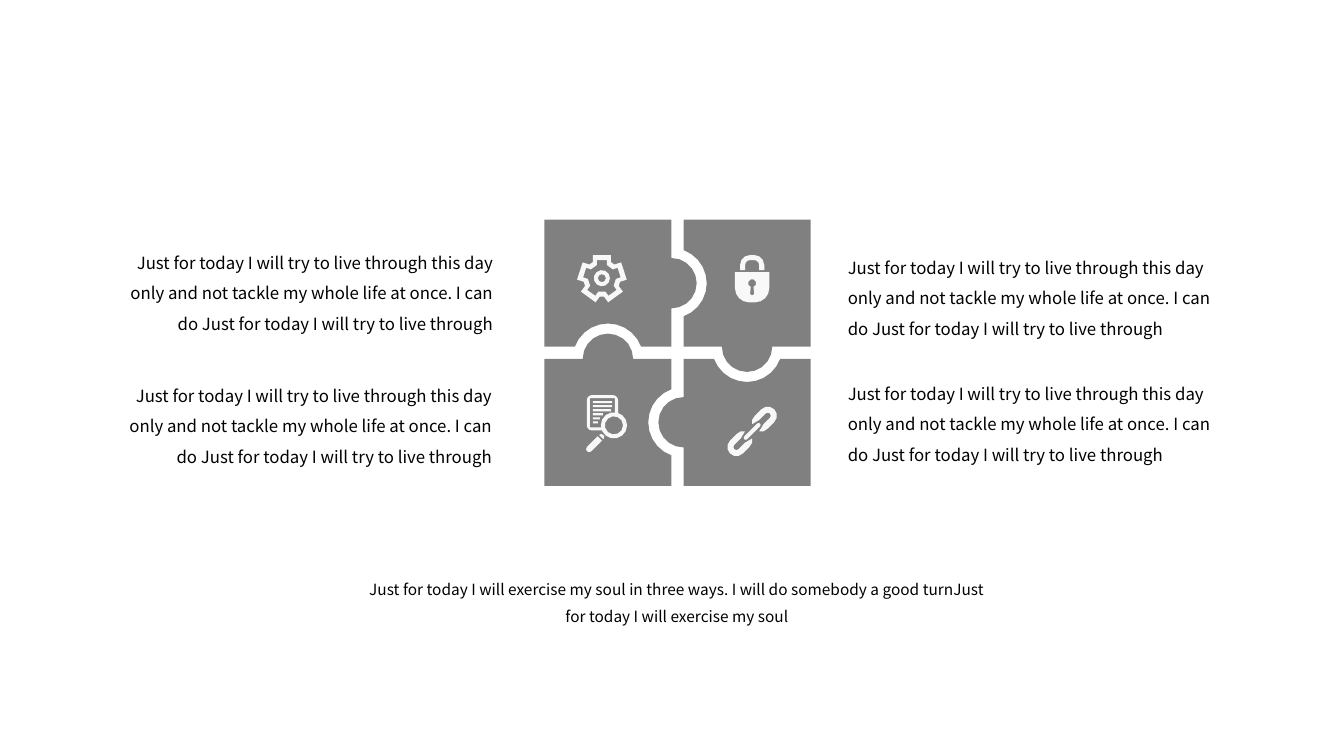
from math import cos, radians, sin
from pptx import Presentation
from pptx.dml.color import RGBColor
from pptx.enum import text
from pptx.util import Inches, Pt

GRAY, WHITE, BLACK = "808080", "F8F8F8", "000000"

prs = Presentation()
prs.slide_width, prs.slide_height = Inches(13.33), Inches(7.5)
s = prs.slides.add_slide(prs.slide_layouts[6])


def arc(cx, cy, r, start, end):
    steps = max(3, round(abs(end - start) * (r + 0.1) / 6))
    angles = [radians(start + (end - start) * i / steps) for i in range(steps + 1)]
    return [(cx + r * cos(a), cy + r * sin(a)) for a in angles]


def draw(color, contours, center=(0, 0), angle=0):
    c, n = cos(radians(angle)), sin(radians(angle))
    fb = None
    for contour in contours:
        pts = [(Inches(center[0] + x * c - y * n), Inches(center[1] + x * n + y * c))
               for x, y in contour]
        if fb is None:
            fb = s.shapes.build_freeform(*pts[0])
        else:
            fb.move_to(*pts[0])
        fb.add_line_segments(pts[1:], close=True)
    sp = fb.convert_to_shape()
    sp.shadow.inherit = False
    sp.fill.solid()
    sp.fill.fore_color.rgb = RGBColor.from_string(color)
    sp.line.fill.background()


piece = [(-1.32, -1.32), (-0.06, -1.32), *arc(-0.06, -0.69, 0.25, -90, 90),
         (-0.06, -0.06), *arc(-0.69, 0.06, 0.35, -20.05, -159.95), (-1.32, -0.06)]
for i in range(4):
    draw(GRAY, [piece], (6.72, 3.5), 90 * i)

tooth = [(-0.09, -0.16), (-0.09, -0.23), (0.09, -0.23), (0.09, -0.16)]
notch = [(-0.05, -0.13), (-0.05, -0.18), (0.05, -0.18), (0.05, -0.13)]
gear = []
for profile in (tooth, notch):
    rim = []
    for i in range(5):
        a = radians(72 * i)
        rim += [(x * cos(a) - y * sin(a), x * sin(a) + y * cos(a)) for x, y in profile]
    gear.append(rim)
gear += [arc(0, 0, r, 0, 360) for r in (0.08, 0.04)]
draw(WHITE, gear, (5.97, 2.76))

shackle = [(-0.12, 0.15), *arc(-0.02, 0.1, 0.1, 180, 270), *arc(0.02, 0.1, 0.1, 270, 360),
           (0.12, 0.15), (0.07, 0.15), *arc(0.02, 0.1, 0.05, 360, 270),
           *arc(-0.02, 0.1, 0.05, 270, 180), (-0.07, 0.15)]
body = [(-0.17, 0.17), (0.17, 0.17), *arc(0.03, 0.33, 0.14, 0, 90),
        *arc(-0.03, 0.33, 0.14, 90, 180)]
keyhole = [*arc(0, 0.28, 0.04, 110, 430), *arc(0, 0.38, 0.02, 0, 180)]
draw(WHITE, [shackle], (7.46, 2.53))
draw(WHITE, [body, keyhole], (7.46, 2.53))

link = [*arc(-0.22, 0, 0.09, 270, 90), (-0.13, 0.09), (-0.08, 0.08), (-0.05, 0.05),
        (-0.13, 0.03), *arc(-0.22, 0, 0.03, 90, 270), (-0.13, -0.03),
        (-0.05, -0.05), (-0.08, -0.08), (-0.13, -0.09)]
rod = [*arc(-0.09, 0, 0.02, 90, 270), *arc(0.09, 0, 0.02, -90, 90)]
draw(WHITE, [rod], (7.46, 4.28), -45)
draw(WHITE, [link, [(-x, -y) for x, y in link]], (7.46, 4.28), -45)

page = [(5.97, 4.24), (5.85, 4.24), (5.85, 3.95), (6.1, 3.95), (6.1, 4.1), (6.13, 4.11),
        *arc(6.08, 3.97, 0.05, 0, -90), *arc(5.87, 3.97, 0.05, 270, 180),
        *arc(5.87, 4.22, 0.05, 180, 90), (5.98, 4.27)]
lines = []
for i, w in enumerate((0.19, 0.19, 0.18, 0.1, 0.07, 0.05)):
    y = 3.98 + 0.04 * i
    lines.append([(5.88, y), (5.88 + w, y), (5.88 + w, y + 0.02), (5.88, y + 0.02)])
grip = [*arc(-0.08, 0, 0.03, 90, 270), (0.07, -0.03), (0.07, 0.03)]
cap = arc(0.09, 0, 0.03, -90, 90)
draw(WHITE, lines)
draw(WHITE, [arc(6.09, 4.22, r, 0, 360) for r in (0.13, 0.09)])
draw(WHITE, [grip, cap], (5.9, 4.4), -45)
draw(WHITE, [page])

today = ("Just for today I will try to live through this day only and not tackle my whole "
         "life at once. I can do Just for today I will try to live through")
soul = ("Just for today I will exercise my soul in three ways. I will do somebody a good "
        "turnJust for today I will exercise my soul")
LEFT, RIGHT, CENTER = text.PP_ALIGN.LEFT, text.PP_ALIGN.RIGHT, text.PP_ALIGN.CENTER
for x, y, w, h, align, size, words in [
    (8.31, 2.41, 3.81, 0.97, LEFT, 12, today),
    (8.31, 3.66, 3.81, 0.97, LEFT, 12, today),
    (1.07, 2.36, 3.92, 0.97, RIGHT, 12, today),
    (1.06, 3.68, 3.92, 0.97, RIGHT, 12, today),
    (3.5, 5.61, 6.43, 0.93, CENTER, 11, soul),
]:
    tf = s.shapes.add_textbox(Inches(x), Inches(y), Inches(w), Inches(h)).text_frame
    tf.word_wrap = True
    tf.auto_size = text.MSO_AUTO_SIZE.SHAPE_TO_FIT_TEXT
    p = tf.paragraphs[0]
    p.text = words
    p.alignment = align
    p.line_spacing = 1.5
    p.font.name = "Noto Sans CJK SC"
    p.font.size = Pt(size)
    p.font.color.rgb = RGBColor.from_string(BLACK)

prs.save("out.pptx")
